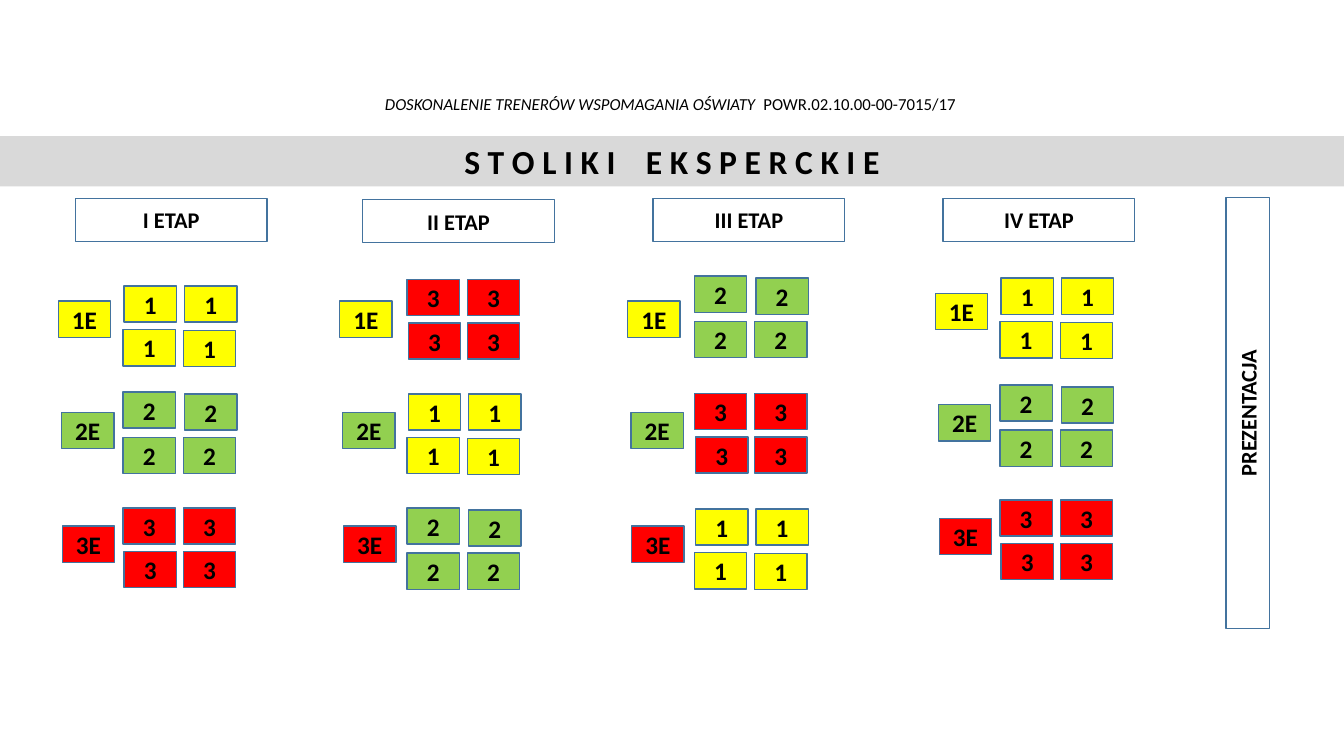
from pptx import Presentation
from pptx.dml.color import RGBColor
from pptx.enum.shapes import MSO_SHAPE
from pptx.enum.text import MSO_ANCHOR, PP_ALIGN
from pptx.util import Cm, Pt

COLORS = {
    "text": "000000", "paper": "FFFFFF", "band": "D9D9D9", "outline": "43739E",
    "1": "FFFF00", "2": "92D050", "3": "FF0000",
}
TILE_SIZE = (1.32, 0.91)
# Offsets of the four seats from the corner of their table, by group
SEATS = {
    "1": ((0.03, 0), (1.55, 0), (0, 1.1), (1.52, 1.12)),
    "2": ((0, 0), (1.55, 0.05), (0, 1.14), (1.52, 1.14)),
    "3": ((0, 0), (1.52, 0), (0.03, 1.1), (1.52, 1.1)),
}
EXPERT_INDENTS = {"1": 0, "2": 0.08, "3": 0.1}
EXPERT_TOPS = (7.59, 10.39, 13.26)
STAGES = (
    {"name": "I ETAP", "header": (1.9, 5), "groups": "123", "seats_left": 3.1,
     "seat_tops": (7.21, 9.88, 12.8), "expert_left": 1.47, "expert_shift": 0},
    {"name": "II ETAP", "header": (9.14, 5.03), "groups": "312", "seats_left": 10.26,
     "seat_tops": (7.04, 9.93, 12.8), "expert_left": 8.56, "expert_shift": 0},
    {"name": "III ETAP", "header": (16.46, 5), "groups": "231", "seats_left": 17.5,
     "seat_tops": (6.96, 9.91, 12.83), "expert_left": 15.82, "expert_shift": 0},
    {"name": "IV ETAP", "header": (23.77, 5), "groups": "123", "seats_left": 25.2,
     "seat_tops": (7.01, 9.7, 12.6), "expert_left": 23.57, "expert_shift": -0.19},
)


def color(name):
    return RGBColor.from_string(COLORS[name])


def add_span(para, text, **formats):
    span = para.add_run()
    span.text = text
    for name, value in {"name": "Calibri", **formats}.items():
        setattr(span.font, name, value)
    span.font.color.rgb = color("text")


def add_label(page, box, text, fill, size, outline="outline", anchor=MSO_ANCHOR.MIDDLE):
    """Add a filled rectangle with bold centred text; box is in centimetres."""
    label = page.shapes.add_shape(MSO_SHAPE.RECTANGLE, *map(Cm, box))
    label.shadow.inherit = False
    label.fill.solid()
    label.fill.fore_color.rgb = color(fill)
    if outline:
        label.line.color.rgb = color(outline)
        label.line.width = Pt(1)
    else:
        label.line.fill.background()
    label.text_frame.vertical_anchor = anchor
    para = label.text_frame.paragraphs[0]
    para.alignment = PP_ALIGN.CENTER
    add_span(para, text, size=Pt(size), bold=True)
    return label


def add_project_line(page, box):
    frame = page.shapes.add_textbox(*map(Cm, box)).text_frame
    formats = {"word_wrap": True, "vertical_anchor": MSO_ANCHOR.BOTTOM, "margin_bottom": Cm(0.22)}
    for name, value in formats.items():
        setattr(frame, name, value)
    para = frame.paragraphs[0]
    para.alignment = PP_ALIGN.CENTER
    para.line_spacing = 0.9
    add_span(para, "DOSKONALENIE TRENERÓW WSPOMAGANIA OŚWIATY  ", size=Pt(12), italic=True)
    add_span(para, "POWR.02.10.00-00-7015/17", size=Pt(12), italic=False)


def add_seats(page, left, top, group):
    for across, down in SEATS[group]:
        add_label(page, (left + across, top + down, *TILE_SIZE), group, group, 18)


def add_stage(page, stage):
    """Add a stage header, its three expert tiles and the tables beside them."""
    add_label(page, (*stage["header"], 4.83, 1.09), stage["name"], "paper", 16)
    for expert, top in zip(EXPERT_INDENTS, EXPERT_TOPS):
        corner = (stage["expert_left"] + EXPERT_INDENTS[expert], top + stage["expert_shift"])
        add_label(page, (*corner, *TILE_SIZE), expert + "E", expert, 18)
    for group, top in zip(stage["groups"], stage["seat_tops"]):
        add_seats(page, stage["seats_left"], top, group)


def main():
    deck = Presentation()
    deck.slide_width, deck.slide_height = Cm(33.87), Cm(19.05)
    page = deck.slides.add_slide(deck.slide_layouts[6])
    add_project_line(page, (2.34, 0, 29.11, 3.1))
    add_label(page, (0, 3.43, 33.87, 1.27), "S T O L I K I    E K S P E R C K I E",
              "band", 24, outline=None, anchor=MSO_ANCHOR.TOP)
    for stage in STAGES:
        add_stage(page, stage)
    presentation_bar = add_label(page, (26.01, 9.86, 10.87, 1.09), "PREZENTACJA", "paper", 16)
    presentation_bar.rotation = 270
    deck.save("out.pptx")


if __name__ == "__main__":
    main()
